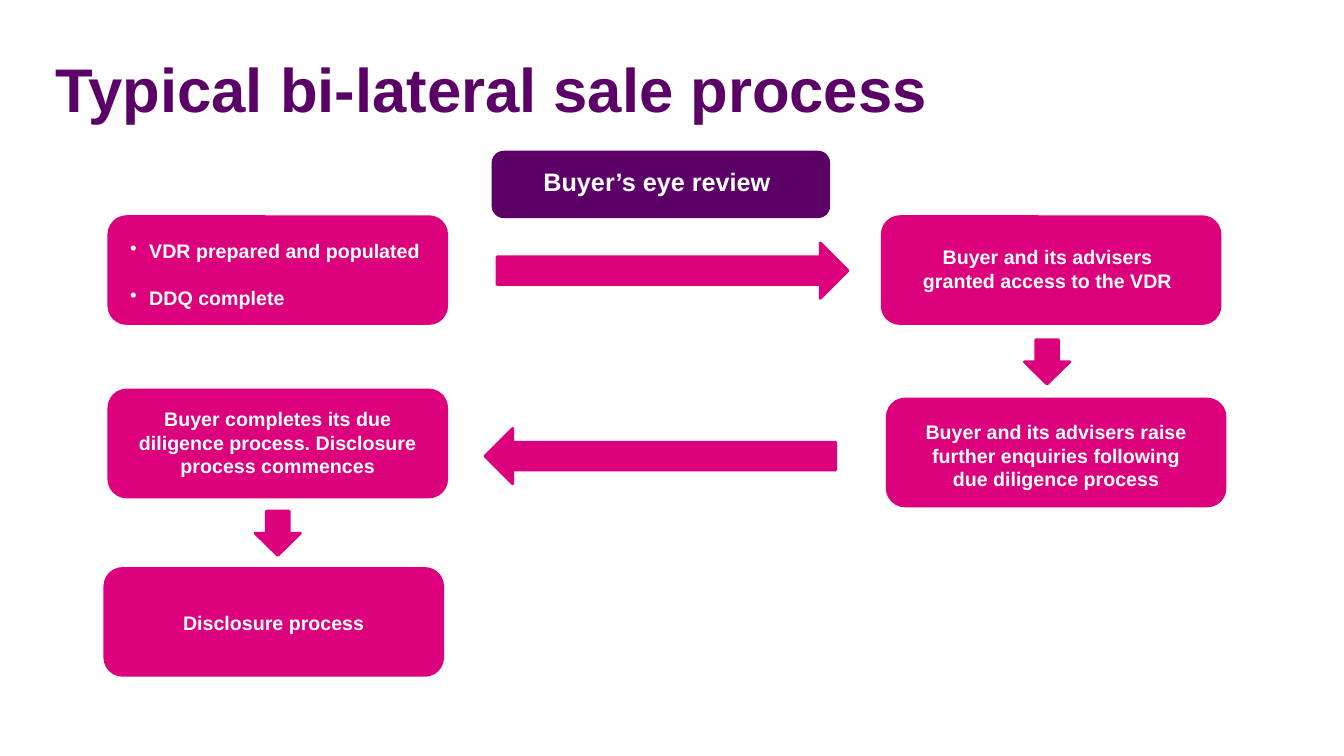
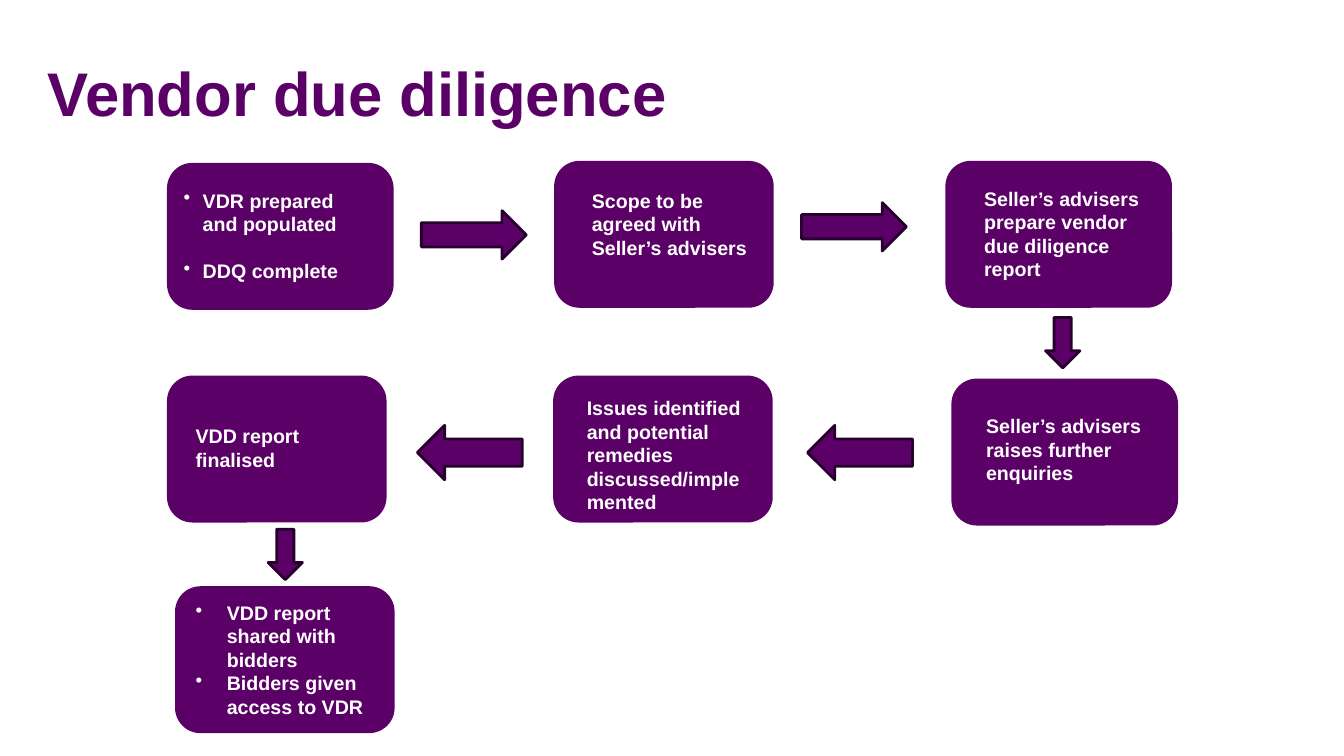
from lxml.etree import SubElement
from pptx import Presentation
from pptx.dml.color import RGBColor
from pptx.enum.shapes import MSO_SHAPE
from pptx.enum.text import MSO_ANCHOR, MSO_AUTO_SIZE, PP_ALIGN
from pptx.oxml.ns import qn
from pptx.util import Inches, Pt

FONT = "Arial"
PURPLE = "5A0066"
DARK_PURPLE = "27002D"
PINK = "DC007D"
WHITE = "FFFFFF"
CORNER_RATIO = 0.16667
CORNER_TEXT_INSET = 0.29289
TITLE_WIDTH, TITLE_HEIGHT = 12.6, 1.25

RIGHT = MSO_SHAPE.RIGHT_ARROW
LEFT = MSO_SHAPE.LEFT_ARROW
DOWN = MSO_SHAPE.DOWN_ARROW
CENTER = PP_ALIGN.CENTER


def color(hex_value):
    return RGBColor.from_string(hex_value)


def add_bullet(paragraph, indent):
    properties = paragraph._p.get_or_add_pPr()
    properties.set("marL", str(Inches(indent)))
    properties.set("indent", str(-Inches(indent)))
    SubElement(properties, qn("a:buChar")).set("char", "•")


def write_text(frame, text, size=14, hex_value=WHITE, align=PP_ALIGN.LEFT,
               bullet_indent=0, gap=0):
    lines = [text] if isinstance(text, str) else text
    for index, line in enumerate(lines):
        paragraph = frame.add_paragraph() if index else frame.paragraphs[0]
        if bullet_indent:
            add_bullet(paragraph, bullet_indent)
        paragraph.alignment = align
        if index and gap:
            paragraph.space_before = Pt(gap)
        run = paragraph.add_run()
        run.text = line
        run.font.name = FONT
        run.font.size = Pt(size)
        run.font.bold = True
        run.font.color.rgb = color(hex_value)


def add_filled_shape(slide, kind, box, fill, outline):
    shape = slide.shapes.add_shape(kind, *map(Inches, box))
    shape.shadow.inherit = False
    shape.fill.solid()
    shape.fill.fore_color.rgb = color(fill)
    shape.line.color.rgb = color(outline)
    shape.line.width = Pt(2)
    return shape


def add_step(slide, box, text_area, text, fill, **text_format):
    shape = add_filled_shape(slide, MSO_SHAPE.ROUNDED_RECTANGLE, box, fill, fill)
    width, height = box[2:]
    text_left, text_top, text_width = text_area
    inset = min(width, height) * CORNER_RATIO * CORNER_TEXT_INSET
    frame = shape.text_frame
    frame.word_wrap = True
    frame.vertical_anchor = MSO_ANCHOR.TOP
    frame.margin_left = Inches(text_left - inset)
    frame.margin_top = Inches(text_top - inset)
    frame.margin_right = Inches(width - text_left - text_width - inset)
    frame.margin_bottom = 0
    write_text(frame, text, **text_format)


def add_process_slide(presentation, title, title_corner, steps, arrows, fill, outline):
    slide = presentation.slides.add_slide(presentation.slide_layouts[5])
    heading = slide.shapes.title
    heading.left, heading.top = map(Inches, title_corner)
    heading.width, heading.height = Inches(TITLE_WIDTH), Inches(TITLE_HEIGHT)
    heading.text_frame.auto_size = MSO_AUTO_SIZE.NONE
    heading.text_frame.vertical_anchor = MSO_ANCHOR.MIDDLE
    write_text(heading.text_frame, title, size=44, hex_value=PURPLE)
    for box, text_area, text, text_format in steps:
        add_step(slide, box, text_area, text, **{"fill": fill, **text_format})
    for kind, box in arrows:
        add_filled_shape(slide, kind, box, fill, outline)


def add_bilateral_slide(presentation):
    size = (3.35, 1.06)
    long_arrow = (3.48, 0.55)
    short_arrow = (0.45, 0.44)
    centered = {"align": CENTER}
    steps = [
        ((1.08, 2.15, *size), (0.21, 0.22, 3),
         ["VDR prepared and populated", "DDQ complete"],
         {"bullet_indent": 0.19, "gap": 17}),
        ((8.75, 2.15, *size), (0.29, 0.28, 2.7),
         "Buyer and its advisers granted access to the VDR", centered),
        ((8.8, 3.96, *size), (0.29, 0.21, 2.77),
         "Buyer and its advisers raise further enquiries following due diligence process",
         centered),
        ((1.08, 3.87, *size), (0.25, 0.17, 2.85),
         "Buyer completes its due diligence process. Disclosure process commences",
         centered),
        ((1.04, 5.64, *size), (0.29, 0.42, 2.77), "Disclosure process", centered),
        ((4.89, 1.51, 3.33, 0.64), (0.5, 0.14, 2.56), "Buyer’s eye review",
         {"size": 18, "fill": PURPLE}),
    ]
    arrows = [
        (RIGHT, (4.93, 2.41, *long_arrow)),
        (DOWN, (10.16, 3.37, *short_arrow)),
        (LEFT, (4.81, 4.25, *long_arrow)),
        (DOWN, (2.53, 5.07, *short_arrow)),
    ]
    add_process_slide(presentation, "Typical bi-lateral sale process", (0.45, 0.25),
                      steps, arrows, PINK, PINK)


def add_vendor_slide(presentation):
    wide = (2.22, 1.43)
    narrow = (2.15, 1.43)
    right_arrow = (1.04, 0.48)
    left_arrow = (1.04, 0.54)
    down_arrow = (0.34, 0.5)
    steps = [
        ((1.67, 1.63, *wide), (0.15, 0.24, 1.89),
         ["VDR prepared and populated", "DDQ complete"],
         {"bullet_indent": 0.19, "gap": 17}),
        ((5.51, 1.61, *narrow), (0.36, 0.26, 1.59),
         "Scope to be agreed with Seller’s advisers", {}),
        ((9.39, 1.61, *wide), (0.37, 0.24, 1.59),
         "Seller’s advisers prepare vendor due diligence report", {}),
        ((9.45, 3.77, *wide), (0.33, 0.34, 1.64),
         "Seller’s advisers raises further enquiries", {}),
        ((5.5, 3.74, *narrow), (0.32, 0.19, 1.59),
         "Issues identified and potential remedies discussed/implemented", {}),
        ((1.67, 3.74, *narrow), (0.27, 0.47, 1.69), "VDD report finalised", {}),
        ((1.75, 5.83, *narrow), (0.19, 0.13, 1.78),
         ["VDD report shared with bidders", "Bidders given access to VDR"],
         {"bullet_indent": 0.31}),
    ]
    arrows = [
        (RIGHT, (4.18, 2.09, *right_arrow)),
        (RIGHT, (7.95, 2.01, *right_arrow)),
        (DOWN, (10.37, 3.15, *down_arrow)),
        (LEFT, (8.01, 4.22, *left_arrow)),
        (LEFT, (4.14, 4.22, *left_arrow)),
        (DOWN, (2.66, 5.25, *down_arrow)),
    ]
    add_process_slide(presentation, "Vendor due diligence", (0.37, 0.29),
                      steps, arrows, PURPLE, DARK_PURPLE)


def main():
    presentation = Presentation()
    presentation.slide_width = Inches(13.33)
    presentation.slide_height = Inches(7.5)
    add_bilateral_slide(presentation)
    add_vendor_slide(presentation)
    presentation.save("out.pptx")


if __name__ == "__main__":
    main()
